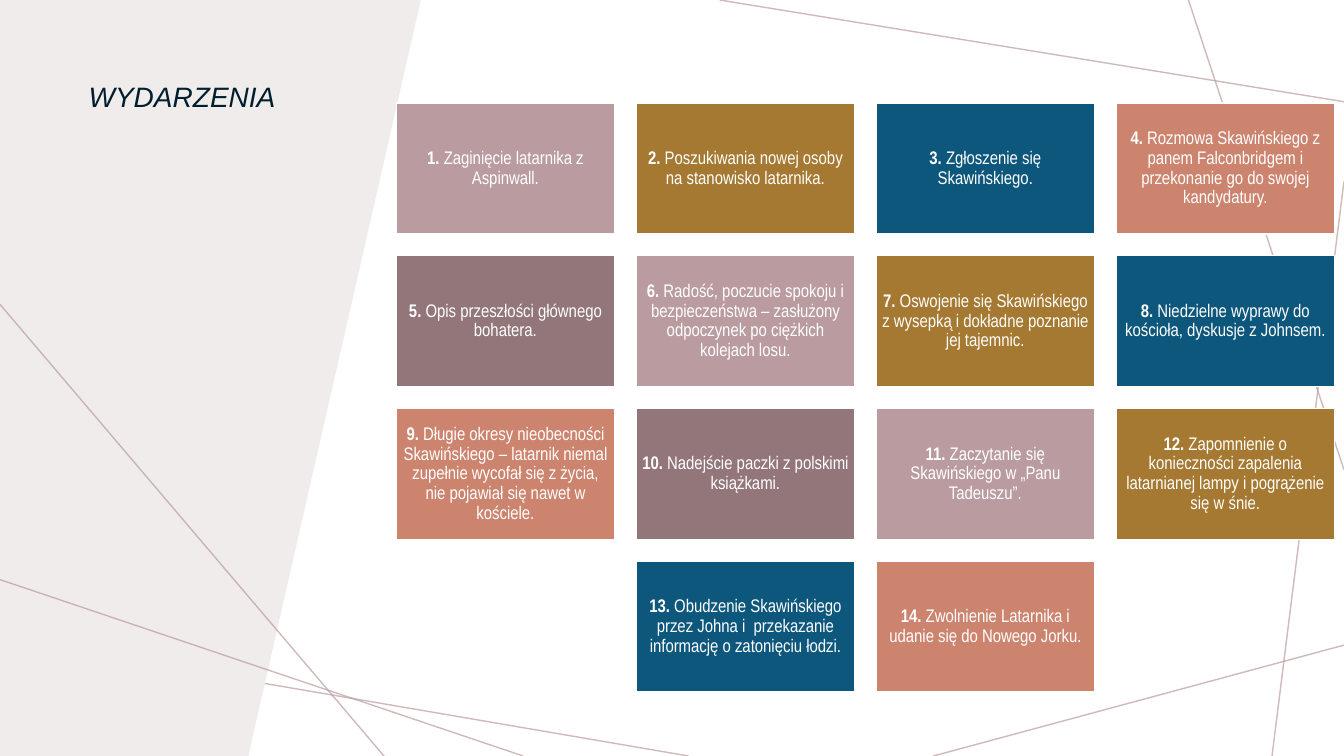
from lxml import etree
from pptx import Presentation
from pptx.dml.color import RGBColor
from pptx.enum.shapes import MSO_CONNECTOR as CONNECTOR, MSO_SHAPE as SHAPE
from pptx.enum.text import MSO_ANCHOR as ANCHOR, PP_ALIGN as ALIGN
from pptx.oxml.ns import qn
from pptx.util import Pt

WIDTH, HEIGHT = 960, 540
COLUMNS = 4
NBSP = " "
WHITE, INK, PANEL, ROSE = "FFFFFF", "001E2E", "F0ECEC", "BA9CA0"
CARD_COLOURS = [ROSE, "A57931", "0E577C", "CC846E", "93767A"]

# Each line: start x, start y, end x, end y
LINES_BEHIND_PANEL = [
    (491.8, 540, 0, 455.8),
    (960, 460.8, 666.7, 540),
    (960, 129.6, 908.6, 540),
    (960, 335.5, 848.9, 0),
    (960, 72.7, 514.1, 0),
]
LINES_OVER_PANEL = [(0, 217.4, 274.3, 540), (373.7, 540, 0, 414)]

EVENTS = [
    "Zaginięcie latarnika z Aspinwall.",
    "Poszukiwania nowej osoby na stanowisko latarnika.",
    "Zgłoszenie się Skawińskiego.",
    "Rozmowa Skawińskiego z panem Falconbridgem i przekonanie go do swojej kandydatury.",
    f"Opis{NBSP}przeszłości głównego bohatera.",
    "Radość, poczucie spokoju i bezpieczeństwa – zasłużony odpoczynek po ciężkich kolejach losu.",
    "Oswojenie się Skawińskiego z wysepką i dokładne poznanie jej tajemnic.",
    "Niedzielne wyprawy do kościoła, dyskusje z Johnsem.",
    "Długie okresy nieobecności Skawińskiego – latarnik niemal zupełnie wycofał się z życia, "
    "nie pojawiał się nawet w kościele.",
    "Nadejście paczki z polskimi książkami.",
    "Zaczytanie się Skawińskiego w „Panu Tadeuszu”.",
    "Zapomnienie o konieczności zapalenia latarnianej lampy i pogrążenie się w śnie.",
    "Obudzenie Skawińskiego przez Johna i  przekazanie informację o zatonięciu łodzi.",
    "Zwolnienie Latarnika i udanie się do Nowego Jorku.",
]


def colour(value):
    return RGBColor.from_string(value)


def add_run(paragraph, text, *, size, font, ink, bold=False, italic=False):
    run = paragraph.add_run()
    run.text = text
    run.font.size = Pt(size)
    run.font.name = font
    run.font.color.rgb = colour(ink)
    run.font.bold = bold
    run.font.italic = italic


def add_lines(slide, lines):
    """Draw thin, partly transparent decorative lines."""
    for line in lines:
        connector = slide.shapes.add_connector(CONNECTOR.STRAIGHT, *map(Pt, line))
        connector.line.width = Pt(1)
        connector.line.color.rgb = colour(ROSE)
        properties = connector._element.spPr
        tint = properties.find(".//" + qn("a:srgbClr"))
        etree.SubElement(tint, qn("a:alpha")).set("val", "70000")
        etree.SubElement(properties, qn("a:effectLst"))


def add_panel(slide, left, top, width, height):
    """Draw the side panel, whose right edge slants inwards."""
    builder = slide.shapes.build_freeform(Pt(left), Pt(top))
    builder.add_line_segments([
        (Pt(left + width), Pt(top)),
        (Pt(left + width * 0.59), Pt(top + height)),
        (Pt(left), Pt(top + height)),
    ])
    panel = builder.convert_to_shape()
    panel.shadow.inherit = False
    panel.fill.solid()
    panel.fill.fore_color.rgb = colour(PANEL)
    panel.line.fill.background()


def add_title(slide, left, top, width, height):
    box = slide.shapes.add_textbox(Pt(left), Pt(top), Pt(width), Pt(height))
    box.text_frame.word_wrap = True
    paragraph = box.text_frame.paragraphs[0]
    paragraph.line_spacing = 0.9
    add_run(paragraph, "WYDARZENIA", size=20, font="Arial", ink=INK, italic=True)


def add_card(slide, number, event, left, top, width, height):
    card = slide.shapes.add_shape(SHAPE.RECTANGLE, Pt(left), Pt(top), Pt(width), Pt(height))
    card.shadow.inherit = False
    card.fill.solid()
    card.fill.fore_color.rgb = colour(CARD_COLOURS[(number - 1) % len(CARD_COLOURS)])
    card.line.color.rgb = colour(WHITE)
    card.line.width = Pt(1)
    frame = card.text_frame
    frame.word_wrap = True
    frame.vertical_anchor = ANCHOR.MIDDLE
    frame.margin_left = frame.margin_right = Pt(3.6)
    frame.margin_top = frame.margin_bottom = Pt(3.6)
    paragraph = frame.paragraphs[0]
    paragraph.alignment = ALIGN.CENTER
    paragraph.line_spacing = 0.9
    style = dict(size=13, font="Arial Narrow", ink=WHITE)
    add_run(paragraph, f"{number}.", bold=True, **style)
    add_run(paragraph, NBSP + event, **style)


def add_event_grid(slide, left, top, width, height):
    """Fill the box with equal cards, centring an incomplete last row."""
    gap = 15.6
    rows = -(-len(EVENTS) // COLUMNS)
    card_width = (width - gap * (COLUMNS - 1)) / COLUMNS
    card_height = (height - gap * (rows - 1)) / rows
    for index, event in enumerate(EVENTS):
        row, column = divmod(index, COLUMNS)
        cards_in_row = min(COLUMNS, len(EVENTS) - row * COLUMNS)
        column += (COLUMNS - cards_in_row) / 2
        add_card(slide, index + 1, event,
                 left + column * (card_width + gap),
                 top + row * (card_height + gap), card_width, card_height)


def main():
    presentation = Presentation()
    presentation.slide_width, presentation.slide_height = Pt(WIDTH), Pt(HEIGHT)
    slide = presentation.slides.add_slide(presentation.slide_layouts[6])
    slide.background.fill.solid()
    slide.background.fill.fore_color.rgb = colour(WHITE)
    add_lines(slide, LINES_BEHIND_PANEL)
    add_panel(slide, 0, 0, 300.6, HEIGHT)
    add_title(slide, 56.2, 56.2, 194.4, 146.2)
    add_lines(slide, LINES_OVER_PANEL)
    add_event_grid(slide, 283.1, 73.6, 670, 420.6)
    presentation.save("out.pptx")


if __name__ == "__main__":
    main()
